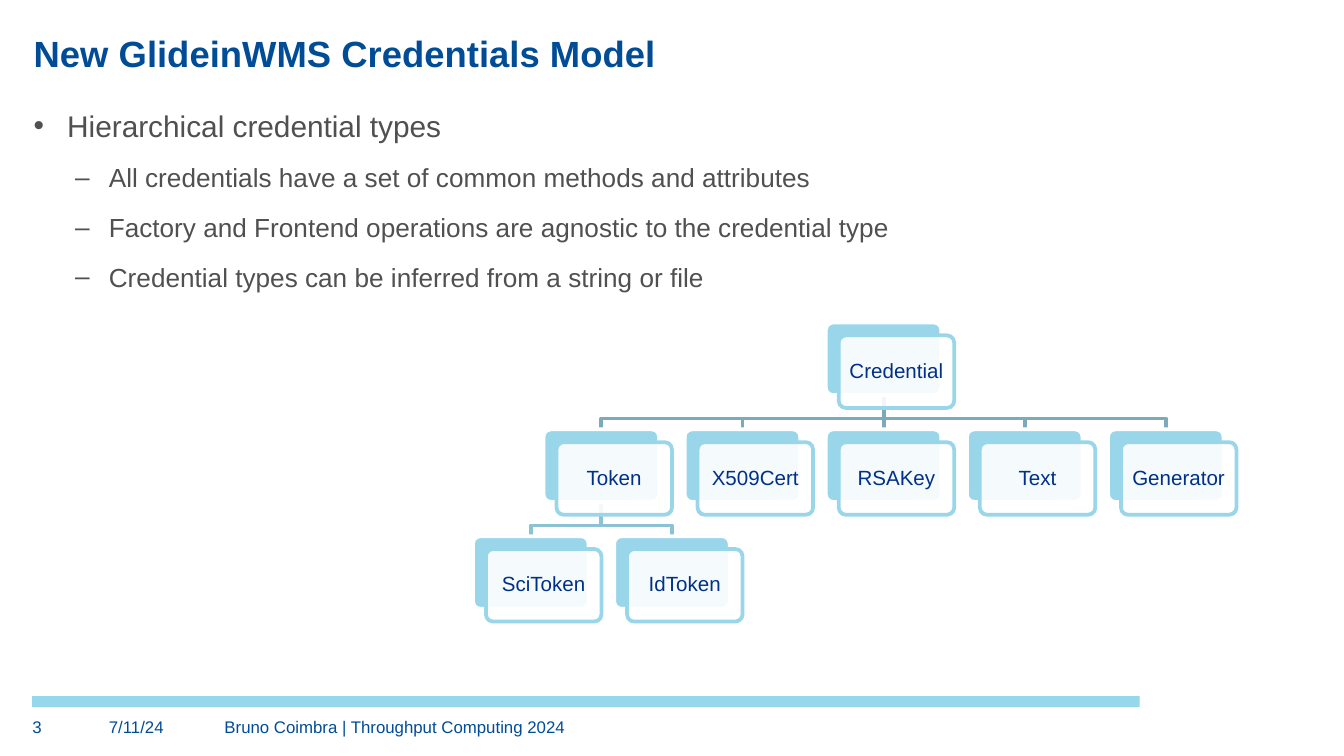
from lxml import etree
from pptx import Presentation
from pptx.dml.color import RGBColor
from pptx.enum.shapes import MSO_CONNECTOR, MSO_SHAPE
from pptx.enum.text import MSO_ANCHOR, MSO_AUTO_SIZE, PP_ALIGN
from pptx.oxml.ns import qn
from pptx.util import Inches, Pt

RECT, ROUNDED = MSO_SHAPE.RECTANGLE, MSO_SHAPE.ROUNDED_RECTANGLE
STRAIGHT = MSO_CONNECTOR.STRAIGHT
TOP, MIDDLE, BOTTOM = MSO_ANCHOR.TOP, MSO_ANCHOR.MIDDLE, MSO_ANCHOR.BOTTOM
LEFT, CENTER = PP_ALIGN.LEFT, PP_ALIGN.CENTER
NO_FIT = MSO_AUTO_SIZE.NONE

FONT = "Arial"
COLORS = {
    "heading": "004C97", "body": "505050", "label": "003087", "bar": "97D7EB",
    "card": "99D6EA", "white": "FFFFFF", "root_link": "7BABBB", "token_link": "8BC2D4",
}

TITLE = "New GlideinWMS Credentials Model"
POINTS = [
    (0, "Hierarchical credential types"),
    (1, "All credentials have a set of common methods and attributes"),
    (1, "Factory and Frontend operations are agnostic to the credential type"),
    (1, "Credential types can be inferred from a string or file"),
]
LEVELS = [("•", 16, 0.25), ("–", 14, 0.56)]
HANGING = 0.25
FOOTER = [
    ("3", 0.24, 0.45),
    ("7/11/24", 0.81, 0.74),
    ("Bruno Coimbra | Throughput Computing 2024", 1.67, 6.85),
]
TYPES = {
    "Credential": (2.5, 0),
    "Token": (0.5, 1),
    "X509Cert": (1.5, 1),
    "RSAKey": (2.5, 1),
    "Text": (3.5, 1),
    "Generator": (4.5, 1),
    "SciToken": (0, 2),
    "IdToken": (1, 2),
}
SUBTYPES = {
    "Credential": ("root_link", ["Token", "X509Cert", "RSAKey", "Text", "Generator"]),
    "Token": ("token_link", ["SciToken", "IdToken"]),
}
SLIDE_WIDTH = 10
SLIDE_HEIGHT = SLIDE_WIDTH * 9 / 16
TREE_LEFT, TREE_TOP, LAST_ROW_TOP = 3.52, 2.4, 3.99
CARD_W, CARD_H = 0.86, 0.54
COLUMN, ROW = 1.05, (LAST_ROW_TOP - TREE_TOP) / 2
SHIFT = CARD_W / 9
BEND = 0.08


def rgb(name):
    return RGBColor.from_string(COLORS[name])


def place(shape, *box):
    shape.left, shape.top, shape.width, shape.height = map(Inches, box)


def write(shape, text, *, size, color, bold=False, anchor=TOP, align=LEFT,
          inset=0, spacing=1):
    frame = shape.text_frame
    frame.auto_size = NO_FIT
    frame.word_wrap = True
    frame.vertical_anchor = anchor
    frame.margin_left = frame.margin_right = Inches(inset)
    frame.margin_top = frame.margin_bottom = Inches(inset)
    for number, (level, line) in enumerate(text if isinstance(text, list) else [(None, text)]):
        paragraph = frame.paragraphs[0] if number == 0 else frame.add_paragraph()
        paragraph.text = line
        paragraph.alignment = align
        paragraph.line_spacing = spacing
        paragraph.space_before = Pt(9.8 if number else 0)
        points = size
        if level is not None:
            mark, points, indent = LEVELS[level]
            paragraph.level = level
            properties = paragraph._p.get_or_add_pPr()
            properties.set("marL", str(Inches(indent)))
            properties.set("indent", str(-Inches(HANGING)))
            etree.SubElement(properties, qn("a:buChar")).set("char", mark)
        font = paragraph.runs[0].font
        font.name, font.size, font.bold = FONT, Pt(points), bold
        font.color.rgb = rgb(color)


def add_panel(slide, kind, box, fill, line=None):
    panel = slide.shapes.add_shape(kind, *map(Inches, box))
    panel.shadow.inherit = False
    panel.fill.solid()
    panel.fill.fore_color.rgb = rgb(fill)
    if line:
        panel.line.color.rgb = rgb(line)
        panel.line.width = Pt(2)
    else:
        panel.line.fill.background()
    return panel


def corner(name):
    column, row = TYPES[name]
    return TREE_LEFT + column * COLUMN, TREE_TOP + row * ROW


def add_link(slide, parent, child, color):
    (parent_x, parent_y), (child_x, child_y) = corner(parent), corner(child)
    start_x, end_x = parent_x + CARD_W / 2, child_x + CARD_W / 2
    start_y, bend_y = parent_y + CARD_H, child_y - BEND
    if start_x == end_x:
        link = slide.shapes.add_connector(
            STRAIGHT, *map(Inches, (start_x, start_y, end_x, child_y)))
        etree.SubElement(link._element.spPr, qn("a:effectLst"))
    else:
        route = [(start_x, bend_y), (end_x, bend_y), (end_x, child_y)]
        outline = slide.shapes.build_freeform(Inches(start_x), Inches(start_y))
        outline.add_line_segments([(Inches(x), Inches(y)) for x, y in route], close=False)
        link = outline.convert_to_shape()
        link.shadow.inherit = False
        link.fill.background()
    link.line.color.rgb = rgb(color)
    link.line.width = Pt(2)


def add_card(slide, name):
    x, y = corner(name)
    back = add_panel(slide, ROUNDED, (x, y, CARD_W, CARD_H), "card", "white")
    front = add_panel(slide, ROUNDED, (x + SHIFT, y + SHIFT, CARD_W, CARD_H), "white", "card")
    back.adjustments[0] = front.adjustments[0] = 0.1
    tint = front.fill._xPr.find(qn("a:solidFill"))[0]
    etree.SubElement(tint, qn("a:alpha")).set("val", "90000")
    write(front, name, size=11, color="label", anchor=MIDDLE, align=CENTER,
          inset=0.05, spacing=0.9)


def main():
    deck = Presentation()
    deck.slide_width, deck.slide_height = Inches(SLIDE_WIDTH), Inches(SLIDE_HEIGHT)
    slide = deck.slides.add_slide(deck.slide_layouts[1])

    title, body = slide.shapes.title, slide.placeholders[1]
    place(title, 0.25, 0.21, 9.5, 0.35)
    write(title, TITLE, size=19.5, color="heading", bold=True, anchor=BOTTOM)
    place(body, 0.25, 0.8, 9.48, 4.15)
    write(body, POINTS, size=14, color="body")

    add_panel(slide, RECT, (0.24, 5.18, 8.24, 0.08), "bar")
    for text, left, width in FOOTER:
        note = slide.shapes.add_textbox(*map(Inches, (left, 5.33, width, 0.2)))
        write(note, text, size=9, color="heading")

    for parent, (color, children) in SUBTYPES.items():
        for child in children:
            add_link(slide, parent, child, color)
    for name in TYPES:
        add_card(slide, name)

    deck.save("out.pptx")


if __name__ == "__main__":
    main()
